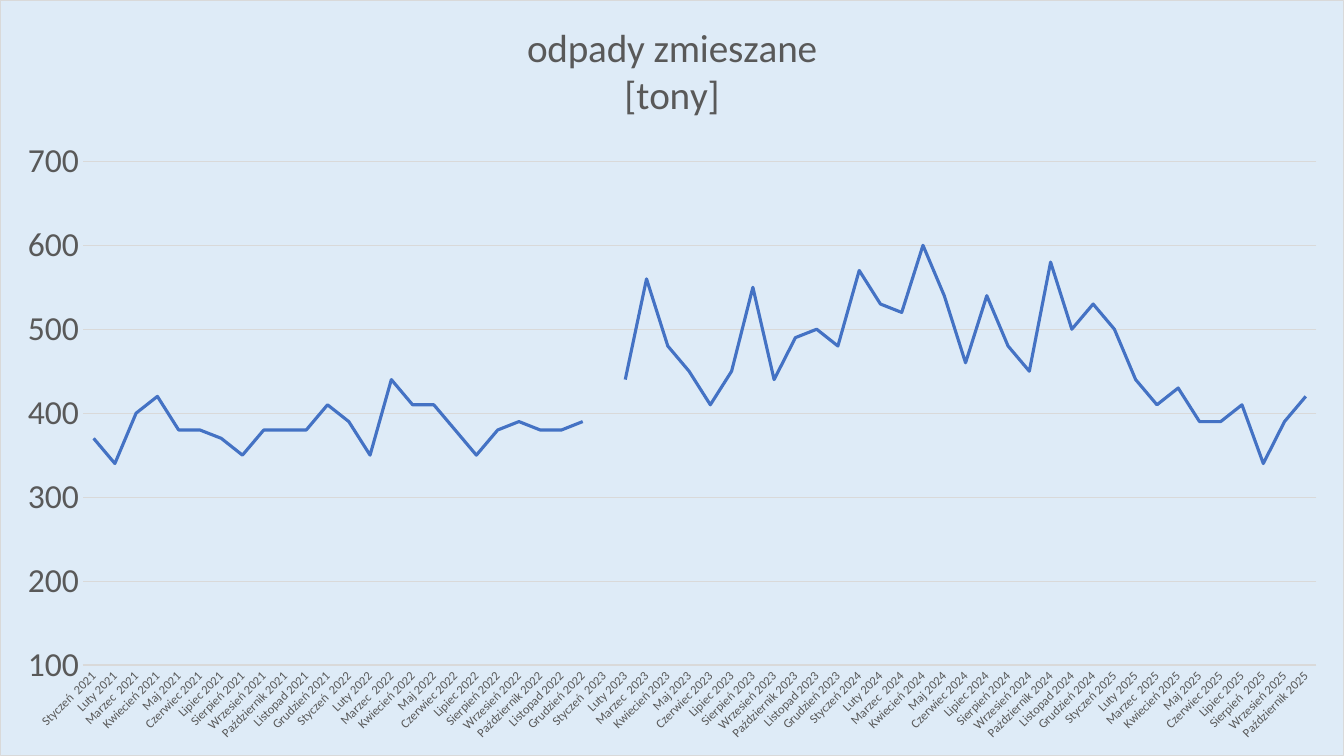
"""Build a slide with a full-page line chart of monthly mixed waste in tonnes."""
from lxml import etree
from pptx import Presentation
from pptx.chart.data import CategoryChartData
from pptx.dml.color import RGBColor
from pptx.enum.chart import XL_CHART_TYPE, XL_MARKER_STYLE, XL_TICK_MARK
from pptx.oxml import parse_xml
from pptx.util import Cm, Pt

LINE_CHART = XL_CHART_TYPE.LINE
NO_MARKER = XL_MARKER_STYLE.NONE
NO_TICK = XL_TICK_MARK.NONE

TITLE = ["odpady zmieszane", "[tony]"]
MONTHS = ["Styczeń", "Luty", "Marzec", "Kwiecień", "Maj", "Czerwiec", "Lipiec",
          "Sierpień", "Wrzesień", "Październik", "Listopad", "Grudzień"]
WIDE_SPACED = {"Styczeń": (2021, 2022, 2023), "Sierpień": (2025,),
               "Marzec": (2021, 2022, 2023, 2024, 2025)}
TONNES = {
    2021: [370, 340, 400, 420, 380, 380, 370, 350, 380, 380, 380, 410],
    2022: [390, 350, 440, 410, 410, 380, 350, 380, 390, 380, 380, 390],
    2023: [None, 440, 560, 480, 450, 410, 450, 550, 440, 490, 500, 480],
    2024: [570, 530, 520, 600, 540, 460, 540, 480, 450, 580, 500, 530],
    2025: [500, 440, 410, 430, 390, 390, 410, 340, 390, 420],
}
COLORS = {"text": "595959", "rule": "D9D9D9", "series": "4472C4", "page": "DEEBF7"}
PAGE_WIDTH, PAGE_HEIGHT = Cm(33.87), Cm(19.05)
PLOT_AREA = {"x": Cm(2.08) / PAGE_WIDTH, "y": Cm(4.06) / PAGE_HEIGHT,
             "w": Cm(31.11) / PAGE_WIDTH, "h": Cm(12.71) / PAGE_HEIGHT}


def color(name):
    return RGBColor.from_string(COLORS[name])


def set_attributes(target, values):
    for name, value in values.items():
        setattr(target, name, value)


def style_font(font, size):
    set_attributes(font, {"size": Pt(size), "name": "Calibri", "bold": False})
    font.color.rgb = color("text")


def style_line(line, name, width):
    line.color.rgb = color(name)
    line.width = Pt(width)


def month_label(month, year):
    spaces = 2 if year in WIDE_SPACED.get(month, ()) else 1
    return month + " " * spaces + str(year)


def add_waste_chart(page):
    data = CategoryChartData()
    data.categories = [month_label(month, year) for year, values in TONNES.items()
                       for month, _ in zip(MONTHS, values)]
    data.add_series("Series 1",
                    [value for values in TONNES.values() for value in values])
    frame = page.shapes.add_chart(LINE_CHART, 0, 0, PAGE_WIDTH, PAGE_HEIGHT, data)
    return frame.chart


def style_title(chart):
    chart.has_title = True
    text = chart.chart_title.text_frame
    text.text = "\n".join(TITLE)
    for para in text.paragraphs:
        for span in para.runs:
            style_font(span.font, 28)


def style_axes(chart):
    months, tonnes = chart.category_axis, chart.value_axis
    for axis, size in ((months, 9), (tonnes, 24)):
        set_attributes(axis, {"major_tick_mark": NO_TICK, "minor_tick_mark": NO_TICK})
        style_font(axis.tick_labels.font, size)
    style_line(months.format.line, "rule", 0.75)
    months._element.txPr.bodyPr.set("rot", "-2700000")
    set_attributes(tonnes, {"minimum_scale": 100, "maximum_scale": 700, "major_unit": 100,
                            "has_major_gridlines": True})
    style_line(tonnes.major_gridlines.format.line, "rule", 0.75)
    tonnes.format.line.fill.background()


def style_series(chart):
    chart.plots[0].vary_by_categories = False
    series = chart.plots[0].series[0]
    series.smooth = False
    series.marker.style = NO_MARKER
    style_line(series.format.line, "series", 2.25)


def style_background(chart):
    fill, border = COLORS["page"], COLORS["rule"]
    chart._chartSpace.chart.addnext(parse_xml(
        f'<c:spPr {NAMESPACES}><a:solidFill><a:srgbClr val="{fill}"/></a:solidFill>'
        f'<a:ln w="{Pt(0.75)}"><a:solidFill><a:srgbClr val="{border}"/></a:solidFill>'
        '</a:ln></c:spPr>'))


def place_plot(chart):
    area = chart._chartSpace.chart.plotArea
    for old in area.xpath("c:layout"):
        area.remove(old)
    layout = parse_xml(f'<c:layout {NAMESPACES}><c:manualLayout/></c:layout>')
    settings = {"layoutTarget": "inner", "xMode": "edge", "yMode": "edge", **PLOT_AREA}
    namespace = layout.nsmap["c"]
    for name, value in settings.items():
        etree.SubElement(layout[0], f"{{{namespace}}}{name}").set("val", str(value))
    area.insert(0, layout)


NAMESPACES = ('xmlns:c="http://schemas.openxmlformats.org/drawingml/2006/chart" '
              'xmlns:a="http://schemas.openxmlformats.org/drawingml/2006/main"')


def main():
    deck = Presentation()
    set_attributes(deck, {"slide_width": PAGE_WIDTH, "slide_height": PAGE_HEIGHT})
    page = deck.slides.add_slide(deck.slide_layouts[6])
    chart = add_waste_chart(page)
    chart.has_legend = False
    set_attributes(chart.font, {"size": Pt(10), "name": "Calibri"})
    for style in (style_title, style_axes, style_series, style_background, place_plot):
        style(chart)
    deck.save("out.pptx")


if __name__ == "__main__":
    main()
